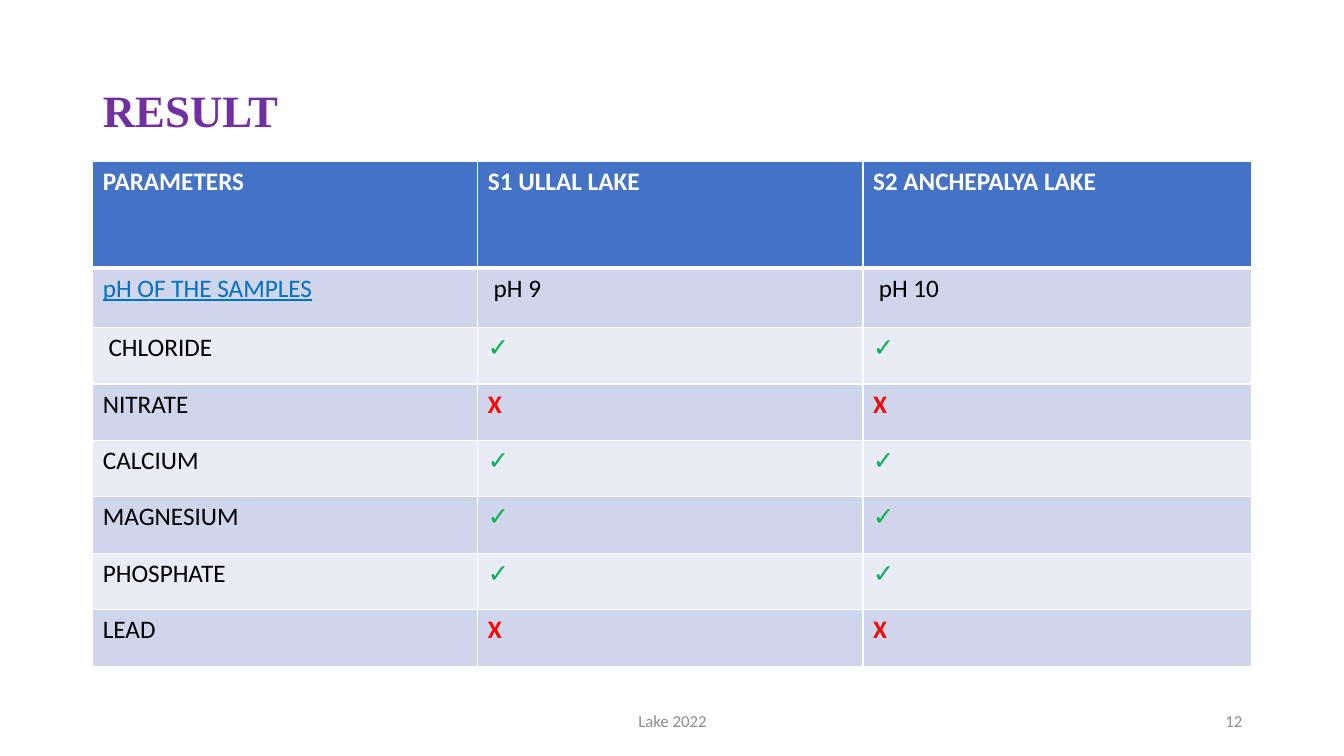
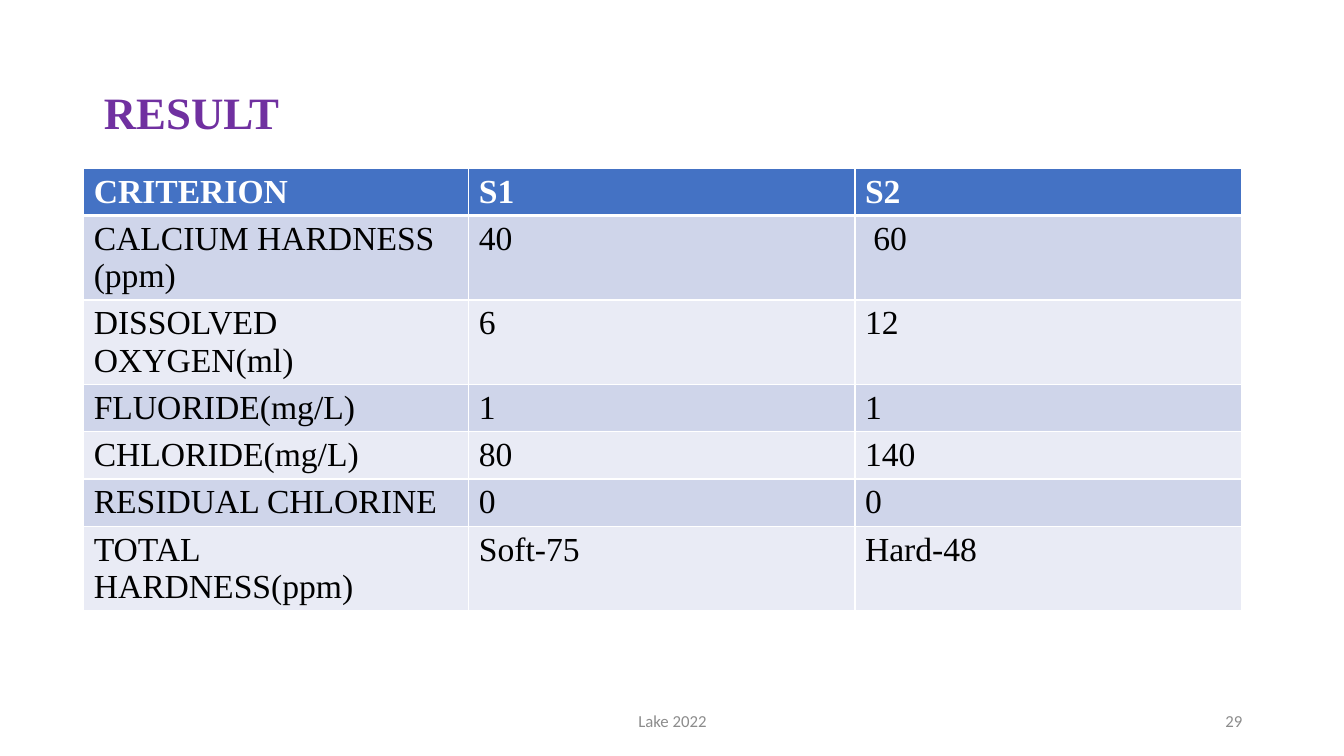
"""Build two lake water result slides, each with a title, a table and a footer."""
from dataclasses import dataclass

from lxml import etree
from pptx import Presentation
from pptx import util as u
from pptx.dml.color import RGBColor
from pptx.enum import text
from pptx.oxml import ns

PX = 9144
HUES = {
    "title": "7030A0", "head": "4472C4", "odd": "CFD5EA", "even": "E9EBF5",
    "white": "FFFFFF", "ink": "000000", "link": "0070C0", "yes": "00B050",
    "no": "FF0000", "foot": "8C8C8C",
}
SERIF, SANS = "Times New Roman", "Calibri"
TITLE = {"name": SERIF, "size": u.Pt(32), "bold": True}
FOOT = {"name": SANS, "size": u.Pt(12), "bold": False}
MARKS = {
    "✓": ("yes", {}),
    "X": ("no", {"bold": True}),
    "pH OF THE SAMPLES": ("link", {"underline": True}),
}


@dataclass(frozen=True)
class Box:
    """Place and size in px, at 100 px to the inch."""
    left: int
    top: int
    wide: int
    high: int

    def emu(self) -> tuple[int, ...]:
        """Return left, top, width and height in EMU."""
        return tuple(n * PX for n in (self.left, self.top, self.wide, self.high))


@dataclass(frozen=True)
class Page:
    """Content of one result slide."""
    num: int
    title: Box
    left: int
    top: int
    cols: tuple[int, ...]
    highs: tuple[int, ...]
    font: str
    size: int
    rows: tuple[tuple[str, ...], ...]


PAGES = (
    Page(12, Box(92, 40, 1150, 145), 92, 160, (382, 382, 385),
         (106, 59) + (56,) * 6, SANS, 18, (
             ("PARAMETERS", "S1 ULLAL LAKE", "S2 ANCHEPALYA LAKE"),
             ("pH OF THE SAMPLES", " pH 9", " pH 10"),
             (" CHLORIDE", "✓", "✓"),
             ("NITRATE", "X", "X"),
             ("CALCIUM", "✓", "✓"),
             ("MAGNESIUM", "✓", "✓"),
             ("PHOSPHATE", "✓", "✓"),
             ("LEAD", "X", "X"))),
    Page(29, Box(93, 42, 1150, 145), 83, 167, (382, 383, 383),
         (41,) * 7, SERIF, 24, (
             ("CRITERION", "S1", "S2"),
             ("CALCIUM HARDNESS (ppm)", "40", " 60"),
             ("DISSOLVED OXYGEN(ml)", "6", "12"),
             ("FLUORIDE(mg/L)", "1", "1"),
             ("CHLORIDE(mg/L)", "80", "140"),
             ("RESIDUAL CHLORINE", "0", "0"),
             ("TOTAL HARDNESS(ppm)", "Soft-75", "Hard-48"))),
)


def rgb(hue: str) -> RGBColor:
    """Look up a named colour."""
    return RGBColor.from_string(HUES[hue])


def write(frame, words: str, hue: str, form: dict, side=text.PP_ALIGN.LEFT) -> None:
    """Put one formatted run into a text frame."""
    par = frame.paragraphs[0]
    par.alignment = side
    run = par.add_run()
    run.text = words
    for key, val in form.items():
        setattr(run.font, key, val)
    run.font.color.rgb = rgb(hue)


def place(shape, box: Box) -> None:
    """Move and size a shape."""
    for key, val in zip(("left", "top", "width", "height"), box.emu()):
        setattr(shape, key, val)


def edge(cell, base: int) -> None:
    """Draw white cell borders, with the bottom one base points wide."""
    props = cell._tc.get_or_add_tcPr()
    sides = {"lnL": 1, "lnR": 1, "lnT": 1, "lnB": base}
    for spot, (tag, wide) in enumerate(sides.items()):
        line = etree.Element(ns.qn(f"a:{tag}"), w=str(u.Pt(wide)))
        fill = etree.SubElement(line, ns.qn("a:solidFill"))
        etree.SubElement(fill, ns.qn("a:srgbClr"), val=HUES["white"])
        props.insert(spot, line)


def grid(slide, page: Page) -> None:
    """Add the table with its header and banded rows."""
    box = Box(page.left, page.top, sum(page.cols), sum(page.highs))
    table = slide.shapes.add_table(
        len(page.rows), len(page.cols), *box.emu()).table
    for col, wide in zip(table.columns, page.cols):
        col.width = wide * PX
    for row, high in zip(table.rows, page.highs):
        row.height = high * PX
    for i, row in enumerate(page.rows):
        band = "head" if i == 0 else "odd" if i % 2 else "even"
        for j, words in enumerate(row):
            cell = table.cell(i, j)
            cell.fill.solid()
            cell.fill.fore_color.rgb = rgb(band)
            edge(cell, 1 if i else 3)
            hue, more = MARKS.get(words, ("ink" if i else "white", {}))
            form = {"name": page.font, "size": u.Pt(page.size), "bold": i == 0}
            write(cell.text_frame, words, hue, form | more)


def foot(slide, box: Box, words: str, side) -> None:
    """Add one footer text."""
    frame = slide.shapes.add_textbox(*box.emu()).text_frame
    frame.word_wrap = True
    frame.vertical_anchor = text.MSO_ANCHOR.MIDDLE
    write(frame, words, "foot", FOOT, side)


def build(deck, page: Page) -> None:
    """Add one result slide."""
    slide = deck.slides.add_slide(deck.slide_layouts[5])
    head = slide.shapes.title
    place(head, page.title)
    form = {"auto_size": text.MSO_AUTO_SIZE.NONE, "word_wrap": True,
            "vertical_anchor": text.MSO_ANCHOR.MIDDLE}
    for key, val in form.items():
        setattr(head.text_frame, key, val)
    write(head.text_frame, "RESULT", "title", TITLE)
    head.text_frame.paragraphs[0].line_spacing = 0.9
    grid(slide, page)
    foot(slide, Box(442, 695, 450, 40), "Lake 2022", text.PP_ALIGN.CENTER)
    foot(slide, Box(942, 695, 300, 40), str(page.num), text.PP_ALIGN.RIGHT)


def main() -> None:
    """Build and save the deck."""
    deck = Presentation()
    deck.slide_width, deck.slide_height = 1333 * PX, 750 * PX
    for page in PAGES:
        build(deck, page)
    deck.save("out.pptx")


if __name__ == "__main__":
    main()
